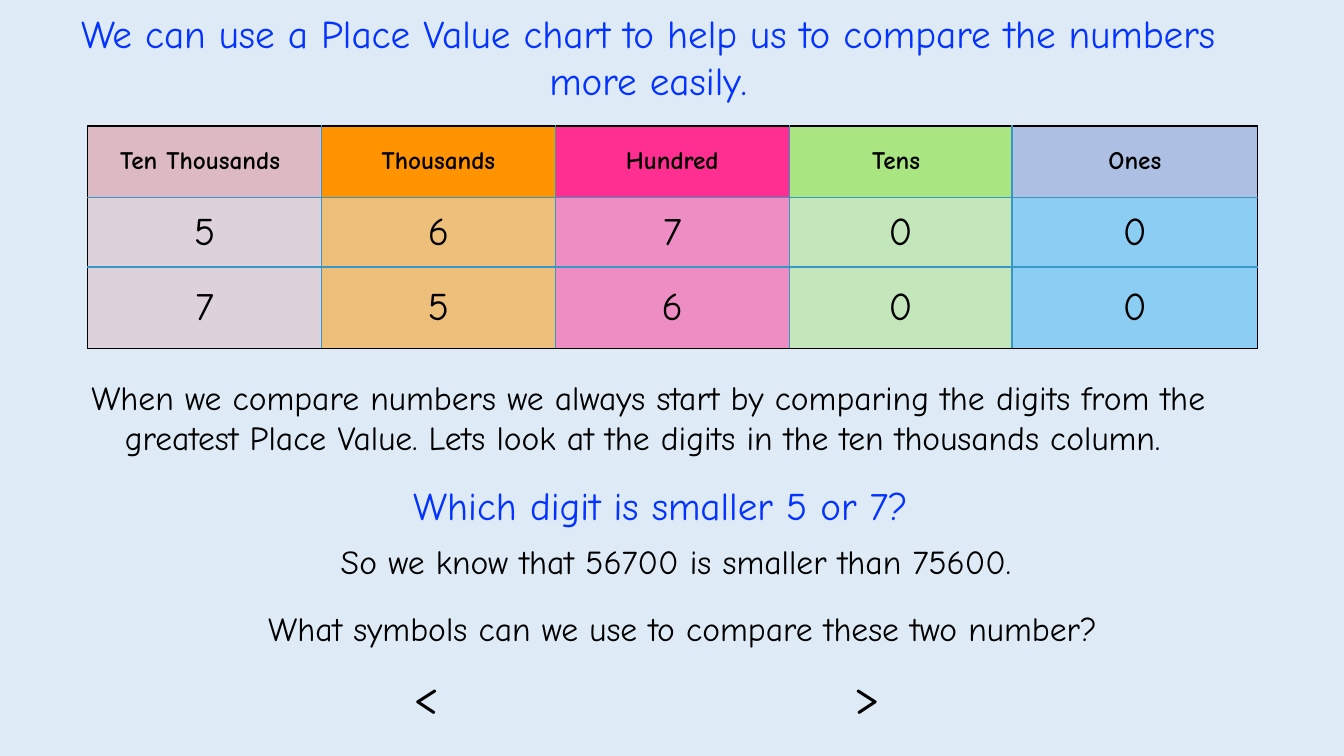
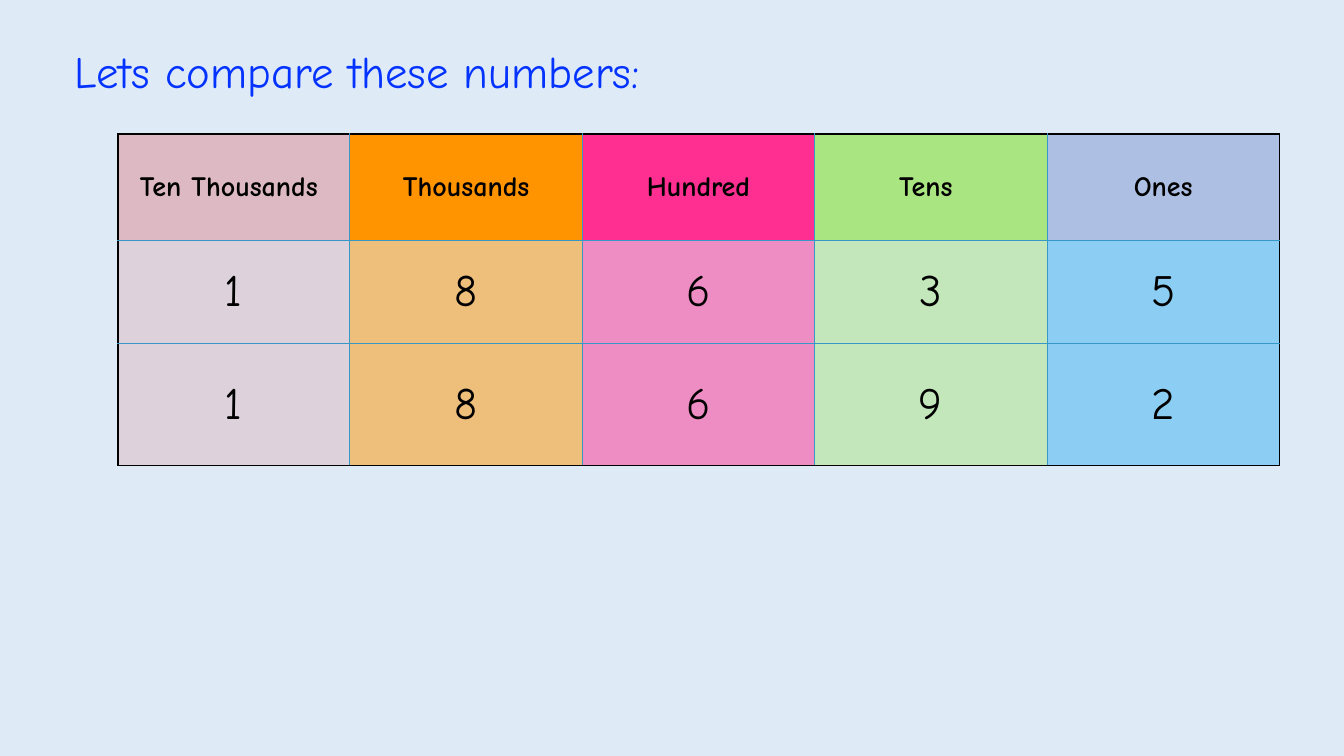
"""Builds two lesson slides on comparing numbers with a place value chart."""
from lxml import etree
from pptx import Presentation
from pptx.dml.color import RGBColor
from pptx.enum.text import MSO_ANCHOR, MSO_AUTO_SIZE, PP_ALIGN
from pptx.oxml.ns import qn
from pptx.util import Emu, Pt

PX = 9144
FONT = "Comic Neue"
INSET = Emu(4 * PX)
LEFT, CENTER = PP_ALIGN.LEFT, PP_ALIGN.CENTER
MIDDLE = MSO_ANCHOR.MIDDLE
NO_AUTOFIT = MSO_AUTO_SIZE.NONE

PALE_BLUE = RGBColor(0xDE, 0xEB, 0xF7)
BLUE = RGBColor(0x04, 0x33, 0xFF)
BLACK = RGBColor(0x00, 0x00, 0x00)
GRID_BLUE = RGBColor(0x37, 0x97, 0xC6)
ROSE = RGBColor(0xDD, 0xBA, 0xC3)
ORANGE = RGBColor(0xFF, 0x93, 0x00)
PINK = RGBColor(0xFF, 0x2F, 0x92)
GREEN = RGBColor(0xA9, 0xE5, 0x80)
LAVENDER = RGBColor(0xAD, 0xC0, 0xE3)
SKY = RGBColor(0x13, 0xA4, 0xEE)

PLACES = [
    ("Ten Thousands ", ROSE, ROSE, 50),
    ("Thousands", ORANGE, ORANGE, 50),
    ("Hundred", PINK, PINK, 50),
    ("Tens ", GREEN, GREEN, 50),
    ("Ones", LAVENDER, SKY, 40),
]


def write_text(frame, text, size, color=BLACK, align=LEFT, bold=False):
    frame.word_wrap = True
    frame.vertical_anchor = MIDDLE
    frame.margin_left = frame.margin_right = INSET
    frame.margin_top = frame.margin_bottom = INSET
    paragraph = frame.paragraphs[0]
    paragraph.alignment = align
    paragraph.line_spacing = 1.0
    run = paragraph.add_run()
    run.text = text
    run.font.name = FONT
    run.font.size = Pt(size)
    run.font.bold = bold
    run.font.color.rgb = color


def add_place_value_chart(slide, left, top, widths, heights, numbers, header_size, digit_size):
    chart = slide.shapes.add_table(
        len(heights), len(widths), left * PX, top * PX, sum(widths) * PX, sum(heights) * PX
    ).table
    for column, width in zip(chart.columns, widths):
        column.width = Emu(width * PX)
    for row, height in zip(chart.rows, heights):
        row.height = Emu(height * PX)
    last_row, last_column = len(heights) - 1, len(widths) - 1
    for r in range(len(heights)):
        for c, (place, header_fill, digit_fill, opacity) in enumerate(PLACES):
            cell = chart.cell(r, c)
            cell.margin_left = cell.margin_right = INSET
            cell.margin_top = cell.margin_bottom = INSET
            cell.vertical_anchor = MIDDLE
            is_header = r == 0
            paragraph = cell.text_frame.paragraphs[0]
            paragraph.alignment = CENTER
            run = paragraph.add_run()
            run.text = place if is_header else numbers[r - 1][c]
            run.font.name = FONT
            run.font.size = Pt(header_size if is_header else digit_size)
            run.font.bold = is_header
            run.font.color.rgb = BLACK
            cell.fill.solid()
            cell.fill.fore_color.rgb = header_fill if is_header else digit_fill
            properties = cell._tc.get_or_add_tcPr()
            if not is_header:
                tint = properties.find(".//" + qn("a:srgbClr"))
                etree.SubElement(tint, qn("a:alpha"), val=str(opacity * 1000))
            outer_edges = [
                ("a:lnL", c == 0), ("a:lnR", c == last_column),
                ("a:lnT", r == 0), ("a:lnB", r == last_row),
            ]
            for position, (edge, is_outer) in enumerate(outer_edges):
                line = etree.Element(qn(edge), w=str(Pt(1)))
                line_fill = etree.SubElement(line, qn("a:solidFill"))
                color = BLACK if is_outer else GRID_BLUE
                etree.SubElement(line_fill, qn("a:srgbClr"), val=str(color))
                properties.insert(position, line)


prs = Presentation()
prs.slide_width, prs.slide_height = Emu(12192000), Emu(750 * PX)
prs.slide_master.background.fill.solid()
prs.slide_master.background.fill.fore_color.rgb = PALE_BLUE
title_only = prs.slide_layouts[5]

titles = [
    ("We can use a Place Value chart to help us to compare the numbers more easily.",
     28, CENTER, (43, 5, 1200, 102)),
    ("Lets compare these numbers:", 32, LEFT, (70, 39, 926, 62)),
]
slides = []
for text, size, align, (left, top, width, height) in titles:
    slide = prs.slides.add_slide(title_only)
    title = slide.shapes.title
    title.left, title.top = Emu(left * PX), Emu(top * PX)
    title.width, title.height = Emu(width * PX), Emu(height * PX)
    title.text_frame.auto_size = NO_AUTOFIT
    write_text(title.text_frame, text, size, BLUE, align)
    slides.append(slide)
method_slide, practice_slide = slides

add_place_value_chart(method_slide, 87, 125, [232, 232, 232, 221, 244], [71, 69, 81],
                      ["56700", "75600"], 18, 28)
add_place_value_chart(practice_slide, 117, 133, [230, 231, 230, 231, 230], [106, 102, 121],
                      ["18635", "18692"], 20, 32)

explanations = [
    ("When we compare numbers we always start by comparing the digits from the greatest "
     "Place Value. Lets look at the digits in the ten thousands column. ",
     24, BLACK, CENTER, (43, 369, 1200, 89)),
    ("Which digit is smaller 5 or 7?", 28, BLUE, LEFT, (406, 473, 613, 55)),
    ("So we know that 56700 is smaller than 75600.", 24, BLACK, LEFT, (334, 533, 788, 48)),
    ("What symbols can we use to compare these two number?",
     24, BLACK, LEFT, (262, 599, 948, 48)),
    ("<", 36, BLACK, LEFT, (406, 655, 93, 68)),
    (">", 36, BLACK, LEFT, (843, 655, 93, 68)),
]
for text, size, color, align, box in explanations:
    textbox = method_slide.shapes.add_textbox(*(Emu(length * PX) for length in box))
    write_text(textbox.text_frame, text, size, color, align)

prs.save("out.pptx")
